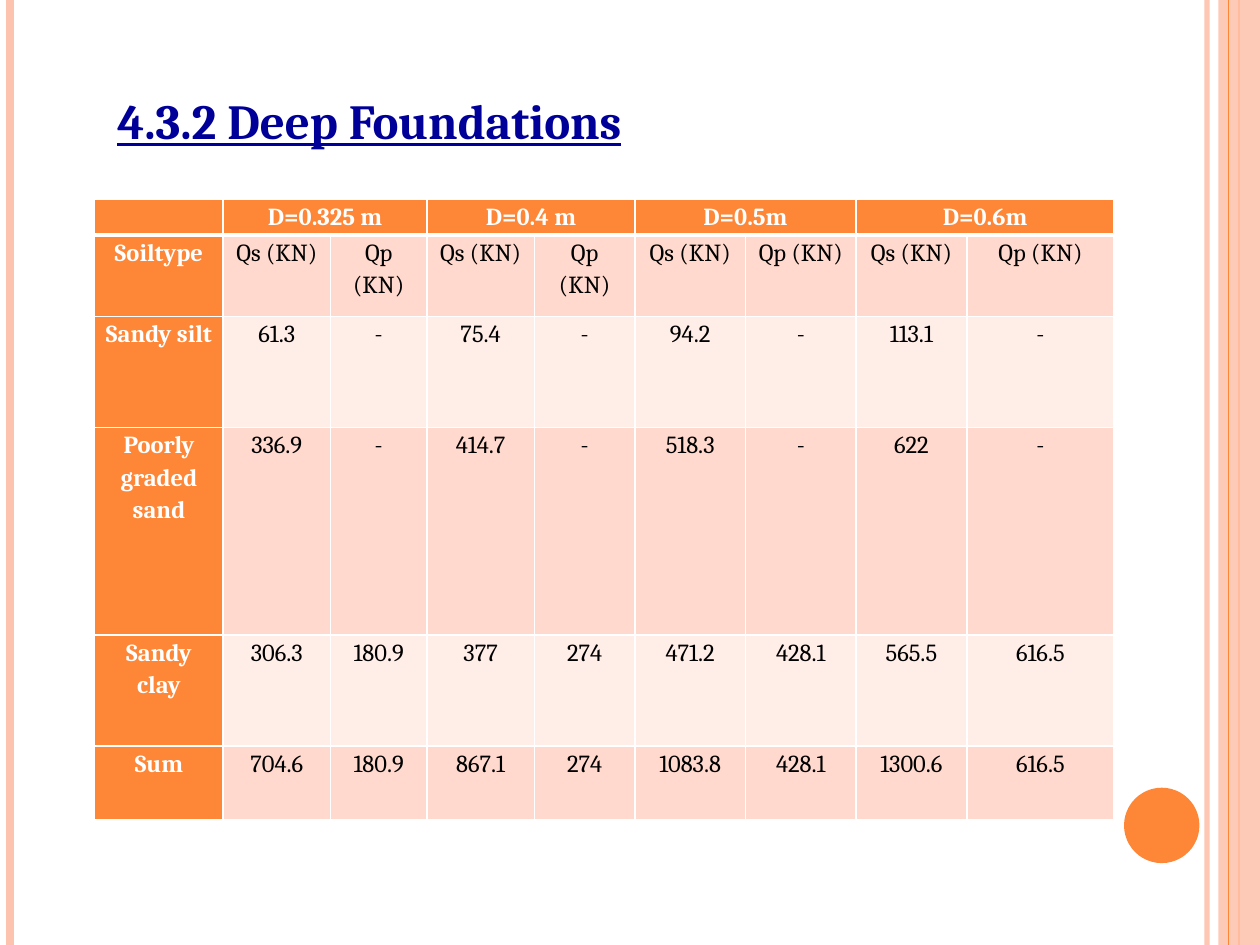
from lxml import etree
from pptx import Presentation
from pptx.dml.color import RGBColor
from pptx.enum.shapes import MSO_CONNECTOR, MSO_SHAPE
from pptx.enum.text import MSO_ANCHOR, MSO_AUTO_SIZE, PP_ALIGN
from pptx.oxml.ns import qn
from pptx.util import Cm, Pt

LINE = MSO_CONNECTOR.STRAIGHT
RECT, OVAL = MSO_SHAPE.RECTANGLE, MSO_SHAPE.OVAL
LEFT, MID = PP_ALIGN.LEFT, PP_ALIGN.CENTER
TOP, FIXED = MSO_ANCHOR.TOP, MSO_AUTO_SIZE.NONE

FONT = "Cambria"
HUES = {
    "main": "FE8637", "soft": "FEC3AE", "dark": "FFD9CE", "pale": "FFEDE8",
    "white": "FFFFFF", "black": "000000", "navy": "000099",
}
WIDE, HIGH = 25.4, 19.05

SIZES = ["D=0.325 m", "D=0.4 m", "D=0.5m", "D=0.6m"]
SOILS = [
    ["Soiltype"] + ["Qs (KN)", "Qp (KN)"] * len(SIZES),
    ["Sandy silt", "61.3", "-", "75.4", "-", "94.2", "-", "113.1", "-"],
    ["Poorly graded sand", "336.9", "-", "414.7", "-", "518.3", "-", "622", "-"],
    ["Sandy clay", "306.3", "180.9", "377", "274", "471.2", "428.1", "565.5", "616.5"],
    ["Sum", "704.6", "180.9", "867.1", "274", "1083.8", "428.1", "1300.6", "616.5"],
]
COLS = [2.59, 2.16, 1.95, 2.16, 2.03, 2.23, 2.23, 2.23, 2.97]
ROWS = [0.72, 1.64, 2.24, 4.18, 2.24, 1.48]


def tint(name):
    return RGBColor.from_string(HUES[name])


def write(frame, text, size=14, hue="black", bold=False, under=False,
          align=MID, space=1.0):
    para = frame.paragraphs[0]
    para.alignment = align
    para.line_spacing = space
    run = para.add_run()
    run.text = text
    font = run.font
    font.name, font.size = FONT, Pt(size)
    font.bold, font.underline = bold, under
    font.color.rgb = tint(hue)


def fade(shape, share):
    for node in shape._element.spPr.iter(qn("a:srgbClr")):
        etree.SubElement(node, qn("a:alpha"), val=str(share * 1000))


def stripe(slide, x, top, high, hue, width):
    line = slide.shapes.add_connector(LINE, Cm(x), Cm(top), Cm(x), Cm(top + high))
    line.line.color.rgb = tint(hue)
    line.line.width = Pt(width)
    etree.SubElement(line._element.spPr, qn("a:effectLst"))
    return line


def solid(slide, kind, x, y, wide, high, hue):
    shape = slide.shapes.add_shape(kind, Cm(x), Cm(y), Cm(wide), Cm(high))
    shape.shadow.inherit = False
    shape.fill.solid()
    shape.fill.fore_color.rgb = tint(hue)
    shape.line.fill.background()
    return shape


def add_frame(slide, x, y, wide, high):
    right = x + wide
    fade(stripe(slide, right - 1.07, y, high, "soft", 3), 93)
    stripe(slide, x + 0.2, y, high, "soft", 4.5)
    stripe(slide, right - 0.42, y, high, "main", 1.5)
    fade(solid(slide, RECT, right - 0.84, y, 0.84, high, "soft"), 87)
    stripe(slide, right - 0.64, y, high, "main", 0.75)
    solid(slide, OVAL, right - 2.74, y + 15.88, 1.52, 1.52, "main")


def add_title(slide, x, y, wide, high):
    title = slide.shapes.title
    title.left, title.top = Cm(x), Cm(y)
    title.width, title.height = Cm(wide), Cm(high)
    frame = title.text_frame
    frame.word_wrap = True
    frame.auto_size = FIXED
    frame.vertical_anchor = TOP
    write(frame, "4.3.2 Deep Foundations", size=28, hue="navy",
          bold=True, under=True, align=LEFT)


def edge(cell, sides):
    props = cell._tc.get_or_add_tcPr()
    for spot, (side, width) in enumerate(sides.items()):
        line = etree.Element(qn("a:ln" + side), w=str(Pt(width)))
        fill = etree.SubElement(line, qn("a:solidFill"))
        etree.SubElement(fill, qn("a:srgbClr"), val=HUES["white"])
        props.insert(spot, line)


def style(cell, row, hue):
    cell.fill.solid()
    cell.fill.fore_color.rgb = tint(hue)
    cell.margin_left = cell.margin_right = Cm(0.18)
    cell.margin_top = cell.margin_bottom = 0
    edge(cell, {"L": 1, "R": 1, "T": 3 if row == 1 else 1, "B": 1 if row else 3})


def add_loads(slide, x, y, wide, high):
    table = slide.shapes.add_table(
        len(ROWS), len(COLS), Cm(x), Cm(y), Cm(wide), Cm(high)).table
    for col, size in zip(table.columns, COLS):
        col.width = Cm(size)
    for row, size in zip(table.rows, ROWS):
        row.height = Cm(size)
    head = [""]
    for size in SIZES:
        head += [size, ""]
    for i, row in enumerate([head] + SOILS):
        for j, text in enumerate(row):
            cell = table.cell(i, j)
            label = i == 0 or j == 0
            band = "dark" if i % 2 else "pale"
            style(cell, i, "main" if label else band)
            write(cell.text_frame, text, hue="white" if label else "black",
                  bold=label, space=1.15)
    for j in range(1, len(COLS), 2):
        table.cell(0, j).merge(table.cell(0, j + 1))


def main():
    deck = Presentation()
    deck.slide_width, deck.slide_height = Cm(WIDE), Cm(HIGH)
    slide = deck.slides.add_slide(deck.slide_layouts[5])
    add_frame(slide, 0, 0, WIDE, HIGH)
    add_loads(slide, 1.91, 4.02, sum(COLS), sum(ROWS))
    add_title(slide, 2.11, 1.7, 13.82, 1.45)
    deck.save("out.pptx")


if __name__ == "__main__":
    main()
